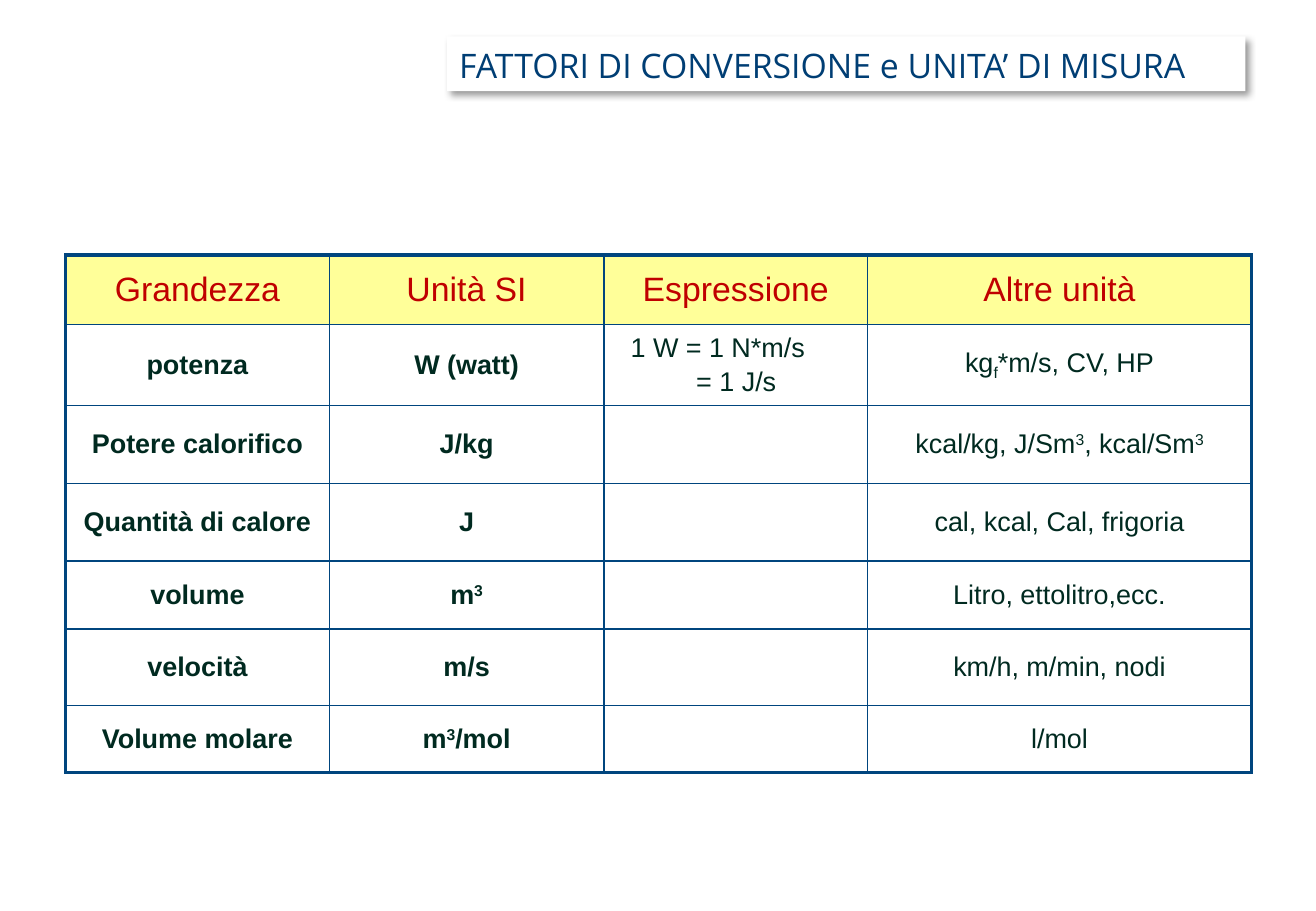
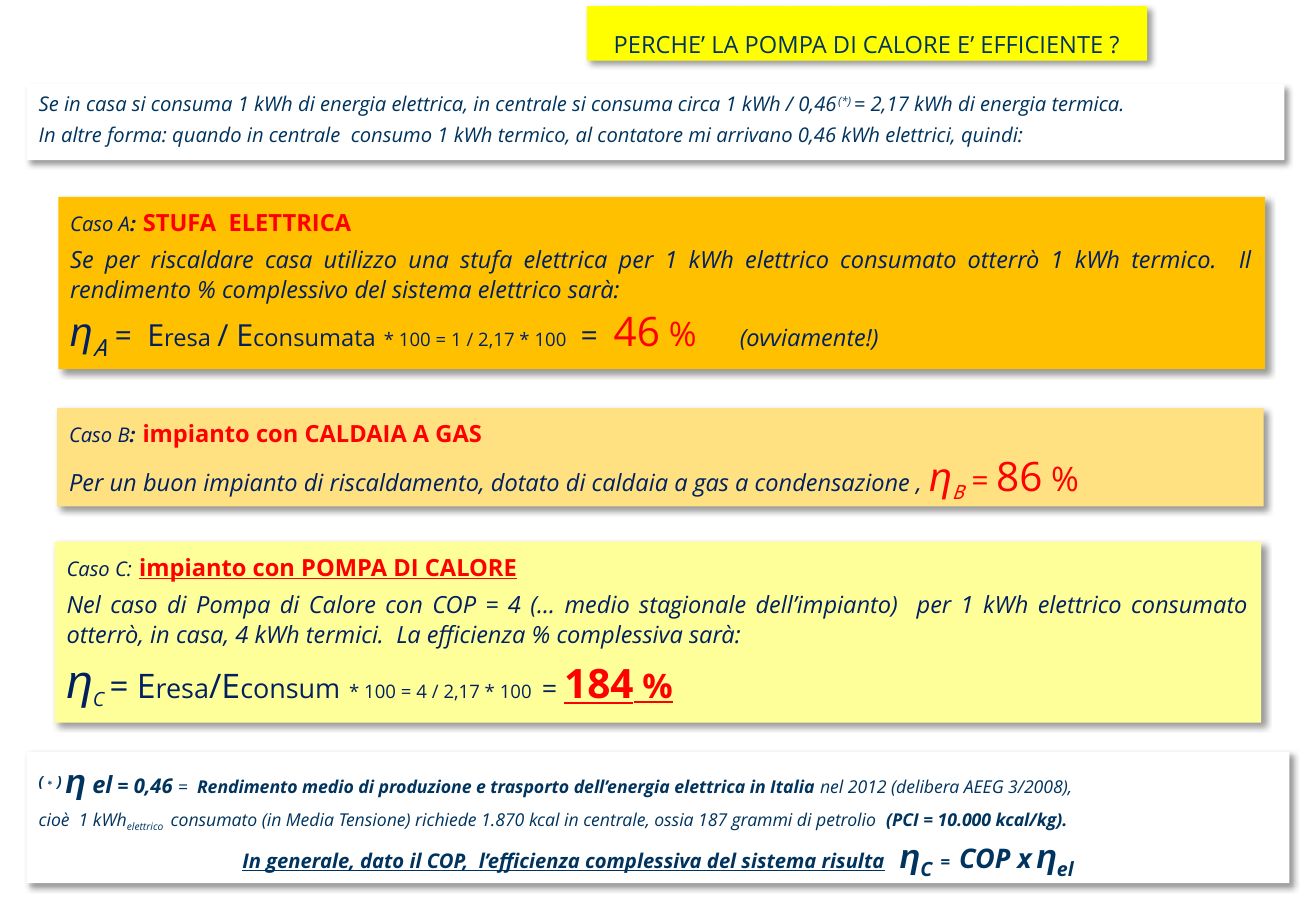
from lxml.etree import SubElement
from pptx import Presentation
from pptx.dml.color import RGBColor
from pptx.enum.shapes import MSO_SHAPE
from pptx.enum.text import MSO_ANCHOR, PP_ALIGN
from pptx.oxml.ns import qn
from pptx.util import Inches, Pt

WHITE = RGBColor(0xFF, 0xFF, 0xFF)
YELLOW = RGBColor(0xFF, 0xFF, 0x00)
PALE_YELLOW = RGBColor(0xFF, 0xFF, 0x99)
AMBER = RGBColor(0xFF, 0xC0, 0x00)
PALE_AMBER = RGBColor(0xFF, 0xE1, 0x81)
RED = RGBColor(0xFF, 0x00, 0x00)
DARK_RED = RGBColor(0xC0, 0x00, 0x00)
TITLE_BLUE = RGBColor(0x00, 0x3E, 0x74)
TEXT_BLUE = RGBColor(0x00, 0x34, 0x5E)
NAVY = RGBColor(0x00, 0x20, 0x60)
GREEN = RGBColor(0x00, 0x2A, 0x20)
BORDER = RGBColor(0x00, 0x45, 0x7E)

BODY_FONT, SYMBOL_FONT, MONO_FONT = "Open Sans", "Arial", "Noto Sans Mono"
BASELINES = {"sub": "-25000", "sup": "30000"}
LINE_SPACING = 1.05

# A run is (text, size, style words).
HEADERS = ["Grandezza", "Unità SI", "Espressione", "Altre unità"]
COLUMN_WIDTHS = [2.17, 2.26, 2.17, 3.16]
ROW_HEIGHTS = [0.57, 0.67, 0.64, 0.64, 0.56, 0.63, 0.55]
CUBE = ("3", 16, "sup")
BOLD_CUBE = ("3", 16, "bold sup")
QUANTITIES = [
    ("potenza", "W (watt)", [(0.11, "1 W = 1 N*m/s"), (0.65, "= 1 J/s")],
     [("kg", 16, ""), ("f", 16, "sub"), ("*m/s, CV, HP", 16, "")]),
    ("Potere calorifico", "J/kg", [],
     [("kcal/kg, J/Sm", 16, ""), CUBE, (", kcal/Sm", 16, ""), CUBE]),
    ("Quantità di calore", "J", [], "cal, kcal, Cal, frigoria"),
    ("volume", [("m", 16, "bold"), BOLD_CUBE], [], "Litro, ettolitro,ecc."),
    ("velocità", "m/s", [], "km/h, m/min, nodi"),
    ("Volume molare", [("m", 16, "bold"), BOLD_CUBE, ("/mol", 16, "bold")], [], "l/mol"),
]

UNITS_TITLE = {
    "place": (3.68, 0.3, 6.57, 0.45), "fill": WHITE, "color": TITLE_BLUE,
    "paragraphs": [
        {"runs": [("FATTORI DI CONVERSIONE e UNITA’ DI MISURA", 20, "")], "align": PP_ALIGN.LEFT}],
}

HEAT_PUMP_BOXES = [
    {"place": (4.83, 0.05, 4.61, 0.45), "fill": YELLOW, "color": TEXT_BLUE,
     "anchor": MSO_ANCHOR.BOTTOM, "bottom": 0.02,
     "paragraphs": [
         {"runs": [("PERCHE’ LA POMPA DI CALORE E’ EFFICIENTE ?", 14, "")],
          "align": PP_ALIGN.CENTER}]},
    {"place": (0.22, 0.69, 10.35, 0.63), "fill": WHITE, "color": TEXT_BLUE,
     "paragraphs": [
         {"runs": [
             ("Se in casa si consuma 1 kWh di energia elettrica, in centrale si consuma "
              "circa 1 kWh / 0,46", 12, "italic"),
             ("(*) ", 12, "italic sup"),
             ("= 2,17 kWh di energia termica.", 12, "italic")]},
         {"runs": [
             ("In altre forma: quando in centrale  consumo 1 kWh termico, al contatore "
              "mi arrivano 0,46 kWh elettrici, quindi:", 12, "italic")], "before": 3.6}]},
    {"place": (0.48, 1.62, 9.93, 1.42), "fill": AMBER, "color": NAVY,
     "paragraphs": [
         {"runs": [("Caso A", 12, "italic"), (":", 12, "italic bold"), (" ", 16, "bold"),
                   ("STUFA  ELETTRICA", 14, "bold red")]},
         {"runs": [
             ("Se per riscaldare casa utilizzo una stufa elettrica per 1 kWh elettrico "
              "consumato otterrò 1 kWh termico.  Il rendimento % complessivo del sistema "
              "elettrico sarà:", 14, "italic")], "before": 4.2},
         {"runs": [
             ("η", 24, "italic symbol"), ("A", 24, "italic mono sub"), (" =  ", 18, "italic"),
             ("E", 18, ""), ("resa ", 14, ""), ("/ E", 18, ""), ("consumata", 14, ""),
             (" ", 18, ""), ("* 100 = 1 / 2,17 * 100\t", 11, ""), ("=  ", 18, ""),
             ("46", 24, "red"), (" %\t", 20, "red"), ("(ovviamente!)", 14, "italic")],
          "tabs": [4.2, 5.51]}]},
    {"place": (0.47, 3.36, 9.93, 0.81), "fill": PALE_AMBER, "color": NAVY,
     "paragraphs": [
         {"runs": [("Caso B", 12, "italic"), (":", 12, "italic bold"), (" ", 16, "bold"),
                   ("impianto con CALDAIA A GAS", 14, "bold red")]},
         {"runs": [
             ("Per un buon impianto di riscaldamento, dotato di caldaia a gas a "
              "condensazione , ", 14, "italic"),
             ("η", 24, "italic symbol red"), ("B", 20, "italic mono sub red"),
             (" = ", 18, "italic red"), ("86", 24, "red"), (" %", 20, "red")]}]},
    {"place": (0.45, 4.46, 9.93, 1.49), "fill": PALE_YELLOW, "color": NAVY,
     "paragraphs": [
         {"runs": [("Caso C:", 12, "italic"), (" ", 16, ""),
                   ("impianto con POMPA DI CALORE", 14, "bold underline red")]},
         {"runs": [
             ("Nel caso di Pompa di Calore con COP = 4 (… medio stagionale dell’impianto)  "
              "per 1 kWh elettrico consumato otterrò, in casa, 4 kWh termici.  La "
              "efficienza % complessiva sarà:", 14, "italic")], "before": 4.2},
         {"runs": [
             ("η", 28, "italic symbol"), ("C ", 20, "italic sub"), ("= ", 20, "italic"),
             ("E", 20, ""), ("resa", 16, ""), ("/E", 20, ""), ("consum", 16, ""),
             (" ", 20, ""), ("* 100 = 4 / 2,17 * 100  ", 11, ""), ("= ", 16, ""),
             ("184", 24, "bold underline red"), (" %", 20, "bold underline red")]}]},
    {"place": (0.22, 6.19, 10.39, 1.08), "fill": WHITE, "color": TEXT_BLUE,
     "paragraphs": [
         {"runs": [
             ("(∗) ", 14, "bold italic symbol sup"), ("η", 20, "bold italic symbol"),
             (" el", 14, "bold italic"), (" ", 11, "bold italic"),
             ("= 0,46 ", 12, "bold italic"), ("=  ", 10.5, "italic"),
             ("Rendimento medio di produzione e trasporto dell’energia elettrica in "
              "Italia ", 10.5, "bold italic"),
             ("nel 2012 (delibera AEEG 3/2008),", 10.5, "italic")]},
         {"runs": [
             ("cioè  1 kWh", 10.5, "italic"), ("elettrico ", 10.5, "italic sub"),
             (" consumato (in Media Tensione) richiede 1.870 kcal in centrale, ossia "
              "187 grammi di petrolio  ", 10.5, "italic"),
             ("(PCI = 10.000 kcal/kg).", 10.5, "bold italic")], "before": 4},
         {"runs": [
             ("In generale, dato il COP,  l’efficienza complessiva del sistema risulta",
              12, "bold italic underline"),
             ("  ", 16, "bold italic"), ("η", 20, "bold italic symbol"),
             ("C", 20, "bold italic sub"), ("  ", 16, "bold italic sub"),
             ("=  ", 10.5, "bold italic"), ("COP x", 16, "bold italic"),
             (" ", 10.5, "bold italic"), ("η", 20, "bold italic symbol"),
             ("el", 20, "bold italic sub")], "align": PP_ALIGN.CENTER}]},
]


def add_runs(paragraph, runs, color, font_name=BODY_FONT):
    for text, size, style in runs:
        words = style.split()
        run = paragraph.add_run()
        run.text = text
        name = font_name
        if "symbol" in words:
            name = SYMBOL_FONT
        elif "mono" in words:
            name = MONO_FONT
        formats = {"name": name, "size": Pt(size), "bold": "bold" in words,
                   "italic": "italic" in words, "underline": "underline" in words}
        for attribute, value in formats.items():
            setattr(run.font, attribute, value)
        run.font.color.rgb = RED if "red" in words else color
        for word in words:
            if word in BASELINES:
                run.font._element.set("baseline", BASELINES[word])


def add_shadow(shape):
    """Soft shadow falling to the lower right."""
    effects = SubElement(shape._element.spPr, qn("a:effectLst"))
    shadow = SubElement(effects, qn("a:outerShdw"), blurRad=str(Pt(4)), dist=str(Pt(3)),
                        dir=str(45 * 60000), algn="tl", rotWithShape="0")
    black = SubElement(shadow, qn("a:srgbClr"), val="000000")
    SubElement(black, qn("a:alpha"), val="40000")


def add_tabs(paragraph, positions):
    tabs = SubElement(paragraph._p.get_or_add_pPr(), qn("a:tabLst"))
    for position in positions:
        SubElement(tabs, qn("a:tab"), pos=str(Inches(position)), algn="l")


def add_box(slide, box):
    shape = slide.shapes.add_shape(MSO_SHAPE.RECTANGLE, *map(Inches, box["place"]))
    shape.fill.solid()
    shape.fill.fore_color.rgb = box["fill"]
    shape.line.fill.background()
    add_shadow(shape)
    frame = shape.text_frame
    frame.word_wrap = True
    frame.vertical_anchor = box.get("anchor", MSO_ANCHOR.TOP)
    frame.margin_bottom = Inches(box.get("bottom", 0.05))
    for index, content in enumerate(box["paragraphs"]):
        paragraph = frame.add_paragraph() if index else frame.paragraphs[0]
        paragraph.alignment = content.get("align", PP_ALIGN.JUSTIFY)
        paragraph.line_spacing = LINE_SPACING
        if "before" in content:
            paragraph.space_before = Pt(content["before"])
        if "tabs" in content:
            add_tabs(paragraph, content["tabs"])
        add_runs(paragraph, content["runs"], box["color"])


def set_borders(cell, outer_sides):
    for side in "LRTB":
        width = 2.25 if side in outer_sides else 1
        line = SubElement(cell._tc.get_or_add_tcPr(), qn(f"a:ln{side}"), w=str(Pt(width)))
        SubElement(SubElement(line, qn("a:solidFill")), qn("a:srgbClr"), val=str(BORDER))


def fill_cell(cell, content, size, style, color):
    """Write a string, a list of runs, or a list of (indent, text) lines."""
    frame = cell.text_frame
    cell.vertical_anchor = MSO_ANCHOR.MIDDLE
    cell.margin_left = cell.margin_right = Inches(0.11)
    if isinstance(content, str):
        content = [(content, size, style)]
    if content and len(content[0]) == 2:
        for index, (indent, text) in enumerate(content):
            paragraph = frame.add_paragraph() if index else frame.paragraphs[0]
            paragraph._p.get_or_add_pPr().set("marL", str(Inches(indent)))
            if index:
                paragraph.space_before = Pt(2.4)
            add_runs(paragraph, [(text, size, style)], color, SYMBOL_FONT)
    else:
        frame.paragraphs[0].alignment = PP_ALIGN.CENTER
        add_runs(frame.paragraphs[0], content, color, SYMBOL_FONT)


def add_units_table(slide):
    rows = [HEADERS, *QUANTITIES]
    last_row, last_column = len(rows) - 1, len(HEADERS) - 1
    table = slide.shapes.add_table(
        len(rows), len(HEADERS), Inches(0.54), Inches(2.1),
        Inches(sum(COLUMN_WIDTHS)), Inches(sum(ROW_HEIGHTS))).table
    table.first_row = table.horz_banding = False
    for column, width in zip(table.columns, COLUMN_WIDTHS):
        column.width = Inches(width)
    for row, height in zip(table.rows, ROW_HEIGHTS):
        row.height = Inches(height)
    for r, contents in enumerate(rows):
        for c, content in enumerate(contents):
            cell = table.cell(r, c)
            edges = {"L": c == 0, "R": c == last_column, "T": r == 0, "B": r == last_row}
            set_borders(cell, [side for side, outer in edges.items() if outer])
            if r == 0:
                cell.fill.solid()
                cell.fill.fore_color.rgb = PALE_YELLOW
                fill_cell(cell, content, 20, "", DARK_RED)
            else:
                cell.fill.background()
                fill_cell(cell, content, 16, "bold" if c < 2 else "", GREEN)


def main():
    presentation = Presentation()
    presentation.slide_width, presentation.slide_height = Inches(10.83), Inches(7.5)
    blank = presentation.slide_layouts[6]

    units_slide = presentation.slides.add_slide(blank)
    add_units_table(units_slide)
    add_box(units_slide, UNITS_TITLE)

    heat_pump_slide = presentation.slides.add_slide(blank)
    for box in HEAT_PUMP_BOXES:
        add_box(heat_pump_slide, box)

    presentation.save("out.pptx")


if __name__ == "__main__":
    main()
